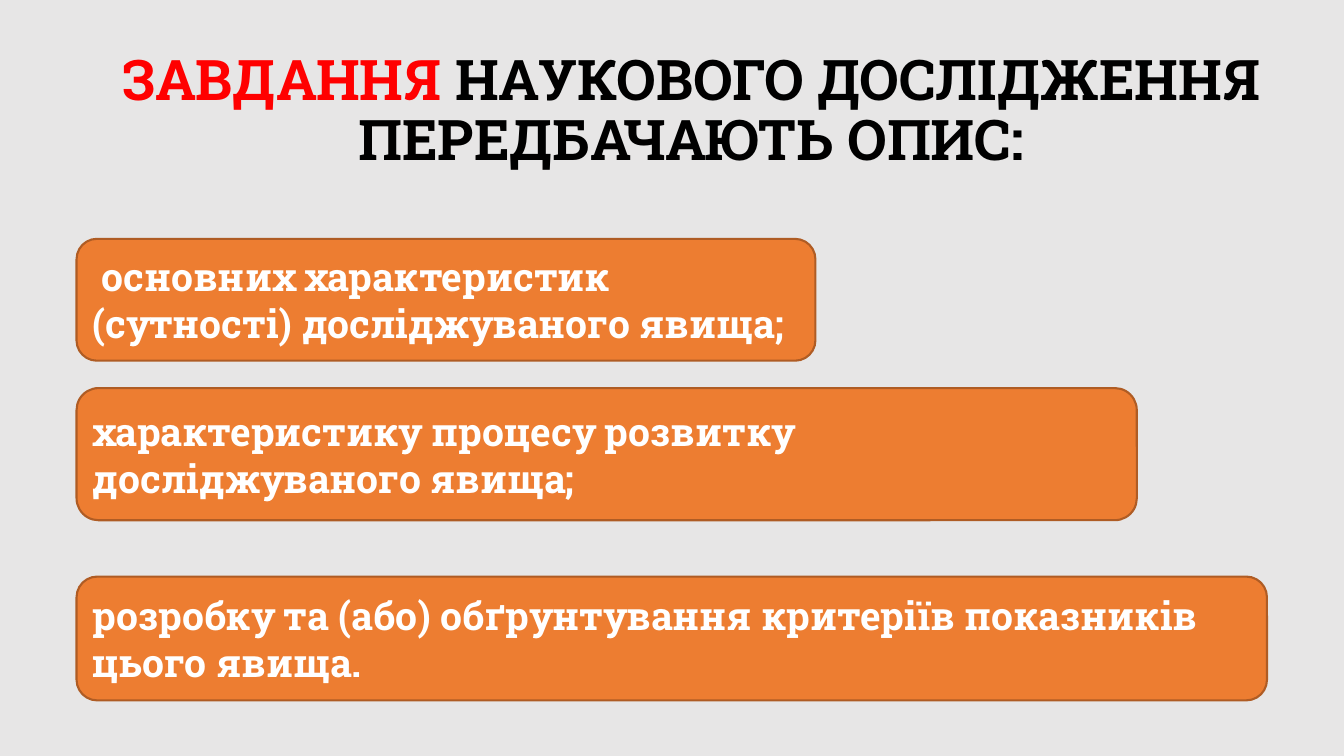
import pptx
import pptx.dml.color
import pptx.enum.shapes
import pptx.enum.text
import pptx.util
from pptx.util import Cm

RGBColor = pptx.dml.color.RGBColor
BACKGROUND = RGBColor(0xE7, 0xE6, 0xE6)
ORANGE = RGBColor(0xED, 0x7D, 0x31)
DARK_ORANGE = RGBColor(0xAF, 0x5C, 0x24)
RED = RGBColor(0xFF, 0x00, 0x00)
BLACK = RGBColor(0x00, 0x00, 0x00)
WHITE = RGBColor(0xFF, 0xFF, 0xFF)


def format_run(run, size, color):
    run.font.name = "Roboto Slab"
    run.font.size = pptx.util.Pt(size)
    run.font.bold = True
    run.font.color.rgb = color


presentation = pptx.Presentation()
presentation.slide_width = Cm(33.87)
presentation.slide_height = Cm(19.05)
slide = presentation.slides.add_slide(presentation.slide_layouts[5])
slide.background.fill.solid()
slide.background.fill.fore_color.rgb = BACKGROUND

title = slide.shapes.title
title.left, title.top, title.width, title.height = Cm(1.3), Cm(0.61), Cm(32.23), Cm(4.45)
title.text_frame.auto_size = pptx.enum.text.MSO_AUTO_SIZE.NONE
title.text_frame.vertical_anchor = pptx.enum.text.MSO_ANCHOR.MIDDLE
paragraph = title.text_frame.paragraphs[0]
paragraph.alignment = pptx.enum.text.PP_ALIGN.CENTER
paragraph.line_spacing = 0.9
for text, color in [
    ("ЗАВДАННЯ ", RED),
    ("НАУКОВОГО ДОСЛІДЖЕННЯ ПЕРЕДБАЧАЮТЬ ОПИС:", BLACK),
]:
    run = paragraph.add_run()
    run.text = text
    format_run(run, 40, color)

tasks = [
    (6.02, 18.62, 3.07, " основних характеристик (сутності) досліджуваного явища;"),
    (9.78, 26.72, 3.33, "характеристику процесу розвитку досліджуваного явища;"),
    (14.53, 30.0, 3.12, "розробку та (або) обґрунтування критеріїв показників цього явища."),
]
for top, width, height, text in tasks:
    shape = slide.shapes.add_shape(
        pptx.enum.shapes.MSO_SHAPE.ROUNDED_RECTANGLE,
        Cm(1.93), Cm(top), Cm(width), Cm(height),
    )
    shape.shadow.inherit = False
    shape.fill.solid()
    shape.fill.fore_color.rgb = ORANGE
    shape.line.color.rgb = DARK_ORANGE
    shape.line.width = pptx.util.Pt(1.5)
    shape.text_frame.text = text
    shape.text_frame.word_wrap = True
    shape.text_frame.vertical_anchor = pptx.enum.text.MSO_ANCHOR.MIDDLE
    paragraph = shape.text_frame.paragraphs[0]
    paragraph.alignment = pptx.enum.text.PP_ALIGN.LEFT
    format_run(paragraph.runs[0], 28, WHITE)

presentation.save("out.pptx")
